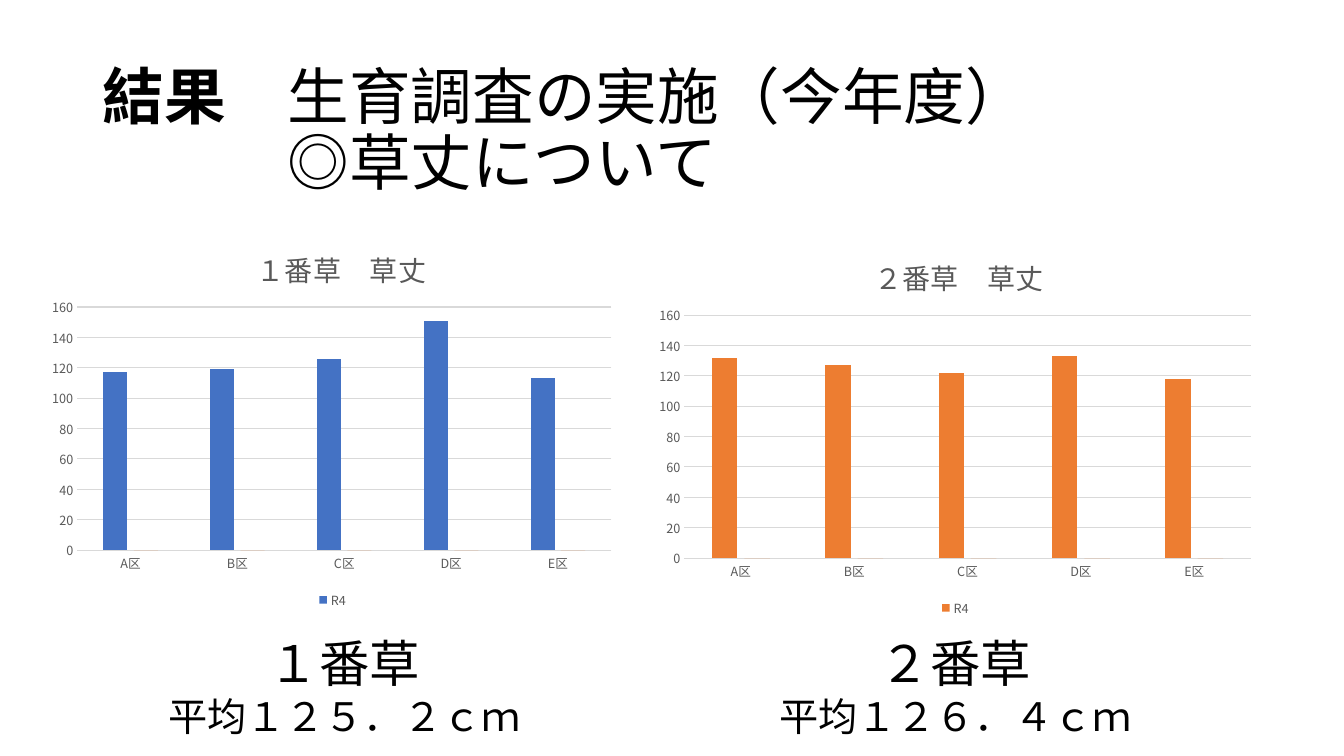
from lxml import etree
from pptx import Presentation
from pptx.chart.data import CategoryChartData
from pptx.dml.color import RGBColor
from pptx.enum.chart import XL_CHART_TYPE, XL_LEGEND_POSITION, XL_TICK_MARK
from pptx.enum.text import MSO_ANCHOR, PP_ALIGN
from pptx.oxml.ns import qn
from pptx.util import Inches, Pt

COLUMNS = XL_CHART_TYPE.COLUMN_CLUSTERED
BOTTOM = XL_LEGEND_POSITION.BOTTOM
NO_TICK = XL_TICK_MARK.NONE
MIDDLE = MSO_ANCHOR.MIDDLE
CENTER = PP_ALIGN.CENTER

COLORS = {"text": "000000", "label": "595959", "grid": "D9D9D9",
          "first": "4472C4", "second": "ED7D31"}
LATIN, JAPANESE = "Arial", "Noto Sans CJK JP"
PLOTS = ["A区", "B区", "C区", "D区", "E区"]
TITLE_SIZE = 44

# Each harvest: name, mean height, bar colour, heights, chart box, caption box
HARVESTS = [
    ("１番草", "平均１２５．２ｃｍ", "first", [117, 119, 126, 151, 113],
     (0.42, 2.19, 5.76, 3.89), (1.53, 6.22, 3.77, 1.18)),
    ("２番草", "平均１２６．４ｃｍ", "second", [132, 127, 122, 133, 118],
     (6.42, 2.27, 6.11, 3.89), (7.59, 6.22, 3.77, 1.18)),
]


def color(name):
    return RGBColor.from_string(COLORS[name])


def set_font(font, size, color_name, name=JAPANESE, bold=False):
    font.size, font.name, font.bold = Pt(size), name, bold
    font.color.rgb = color(color_name)


def style_run(run, size, name=JAPANESE, bold=False):
    set_font(run.font, size, "text", name, bold)
    latin = run.font._element.find(qn("a:latin"))
    east_asian = etree.Element(qn("a:ea"), typeface=JAPANESE)
    latin.addnext(east_asian)


def add_text_box(slide, box):
    text_frame = slide.shapes.add_textbox(*map(Inches, box)).text_frame
    text_frame.word_wrap = True
    return text_frame


def add_title(slide, box):
    text_frame = add_text_box(slide, box)
    text_frame.vertical_anchor = MIDDLE
    paragraph = text_frame.paragraphs[0]
    paragraph.text = "結果"
    paragraph.add_run().text = "　生育調査の実施（今年度）"
    paragraph.add_line_break()
    paragraph.add_run().text = "◎草丈について"
    paragraph.line_spacing = 0.9
    for index, run in enumerate(paragraph.runs):
        style_run(run, TITLE_SIZE, LATIN, bold=index == 0)
    # Hanging indent of three characters lines up the second line
    indent = Pt(3 * TITLE_SIZE)
    properties = paragraph._p.get_or_add_pPr()
    properties.set("marL", str(indent))
    properties.set("indent", str(-indent))


def add_caption(slide, box, harvest, mean):
    text_frame = add_text_box(slide, box)
    text_frame.text = f"{harvest}\n{mean}"
    for paragraph, size in zip(text_frame.paragraphs, (36, 28)):
        paragraph.alignment = CENTER
        style_run(paragraph.runs[0], size)


def set_layout(element, successors, **shares):
    """Place a chart part at shares of the chart's size."""
    for old in element.findall(qn("c:layout")):
        element.remove(old)
    layout = etree.Element(qn("c:layout"))
    manual = etree.SubElement(layout, qn("c:manualLayout"))
    if "w" in shares:
        etree.SubElement(manual, qn("c:layoutTarget"), val="inner")
    for mode in ("xMode", "yMode"):
        etree.SubElement(manual, qn(f"c:{mode}"), val="edge")
    for key, share in shares.items():
        etree.SubElement(manual, qn(f"c:{key}"), val=str(share))
    following = next(child for child in element
                     if child.tag in [qn(tag) for tag in successors])
    following.addprevious(layout)


def style_axes(chart):
    category_axis, value_axis = chart.category_axis, chart.value_axis
    for axis in (category_axis, value_axis):
        axis.major_tick_mark = axis.minor_tick_mark = NO_TICK
        set_font(axis.tick_labels.font, 9, "label")
    value_axis.minimum_scale, value_axis.maximum_scale = 0, 160
    value_axis.major_unit = 20
    value_axis.has_major_gridlines = True
    value_axis.format.line.fill.background()
    for line in (category_axis.format.line, value_axis.major_gridlines.format.line):
        line.color.rgb = color("grid")
        line.width = Pt(0.75)


def add_height_chart(slide, box, harvest, bar_color, heights):
    data = CategoryChartData()
    data.categories = PLOTS
    data.add_series("R4", heights)
    data.add_series("Series 2", [0] * len(PLOTS))
    chart = slide.shapes.add_chart(COLUMNS, *map(Inches, box), data).chart
    set_font(chart.font, 10, "text")

    # Title
    chart.has_title = True
    text_frame = chart.chart_title.text_frame
    text_frame.text = f"{harvest}　草丈"
    set_font(text_frame.paragraphs[0].runs[0].font, 20, "label")
    chart.chart_title.include_in_layout = False
    set_layout(chart.chart_title._element, ["c:overlay"], x=0.36, y=0.05)

    # Bars
    plot = chart.plots[0]
    plot.gap_width, plot.overlap = 219, -27
    plot.vary_by_categories = False
    for series, name in zip(plot.series, (bar_color, "second")):
        series.format.fill.solid()
        series.format.fill.fore_color.rgb = color(name)
    set_layout(chart._chartSpace.chart.plotArea, ["c:barChart"],
               x=0.06, y=0.22, w=0.92, h=0.62)
    style_axes(chart)

    # Legend shows the measured series only
    chart.has_legend = True
    chart.legend.position = BOTTOM
    chart.legend.include_in_layout = False
    set_font(chart.legend.font, 9, "label")
    entry = etree.Element(qn("c:legendEntry"))
    etree.SubElement(entry, qn("c:idx"), val="1")
    etree.SubElement(entry, qn("c:delete"), val="1")
    chart.legend._element.find(qn("c:legendPos")).addnext(entry)


def main():
    presentation = Presentation()
    presentation.slide_width = Inches(13.33)
    presentation.slide_height = Inches(7.5)
    slide = presentation.slides.add_slide(presentation.slide_layouts[6])
    add_title(slide, (0.92, 0.42, 11.5, 1.79))
    for harvest, mean, bar_color, heights, chart_box, caption_box in HARVESTS:
        add_height_chart(slide, chart_box, harvest, bar_color, heights)
        add_caption(slide, caption_box, harvest, mean)
    presentation.save("out.pptx")


if __name__ == "__main__":
    main()
